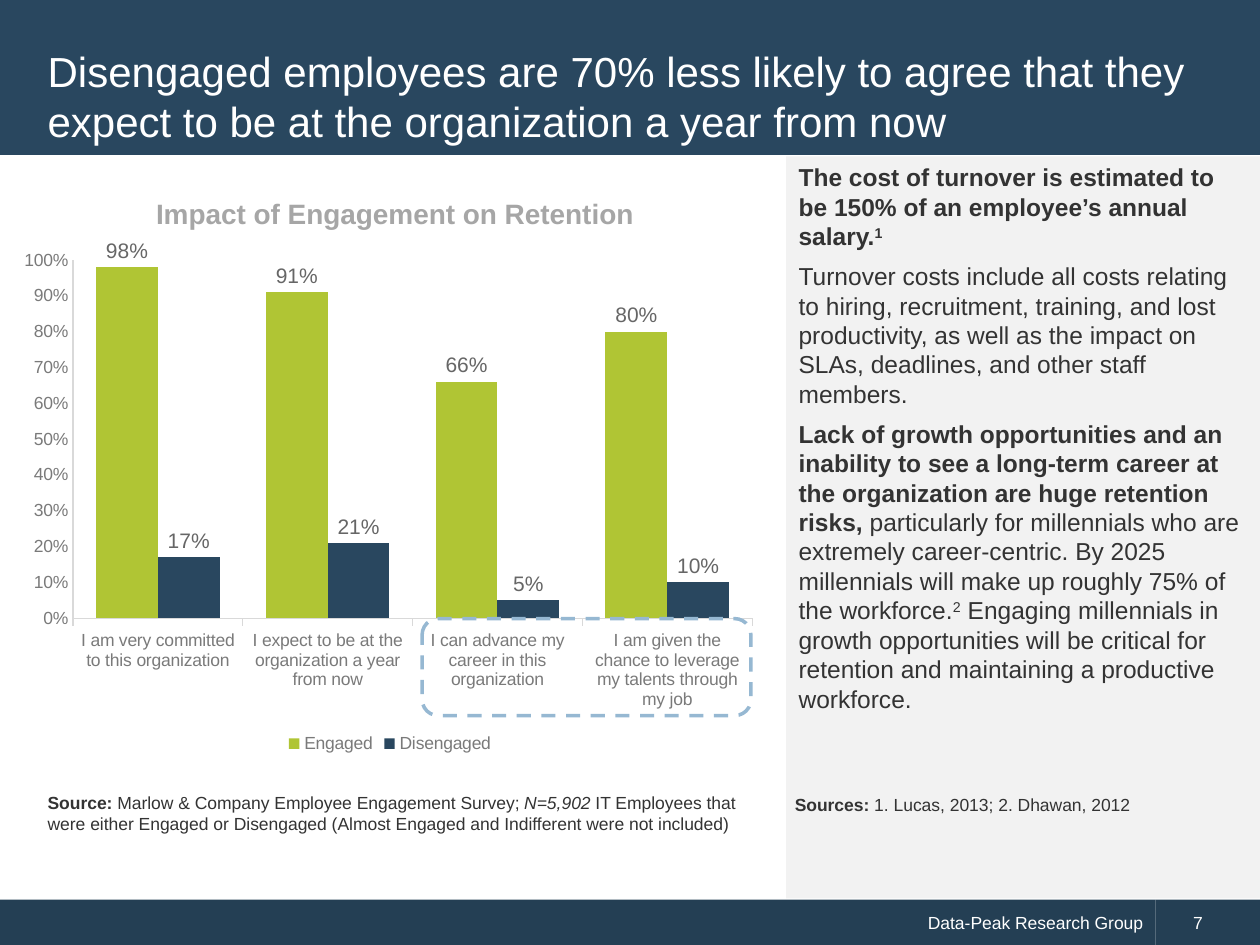
"""Builds a slide on how engagement affects retention."""
import dataclasses
import typing

import lxml.etree
import pptx
import pptx.chart.data
import pptx.chart.series
import pptx.dml.color
import pptx.enum.chart
import pptx.enum.dml
import pptx.enum.shapes
import pptx.enum.text
import pptx.oxml.ns
import pptx.shapes.base
import pptx.slide
import pptx.text.text
import pptx.util

Inches = pptx.util.Inches
Shape = pptx.enum.shapes.MSO_SHAPE
Align = pptx.enum.text.PP_ALIGN
Anchor = pptx.enum.text.MSO_ANCHOR


@dataclasses.dataclass(frozen=True)
class Theme:
    font: str = "Arial"
    navy: str = "29475F"
    footer: str = "243F54"
    panel: str = "F2F2F2"
    white: str = "FFFFFF"
    ink: str = "333333"
    heading: str = "A6A6A6"
    axis_text: str = "7A7A7A"
    axis_line: str = "D9D9D9"
    label: str = "666666"
    green: str = "B0C534"
    highlight: str = "96B8D2"
    title_size: int = 24
    heading_size: int = 16
    body_size: int = 14
    label_size: int = 12
    small_size: int = 10


THEME = Theme()


class Area(typing.NamedTuple):
    left: float
    top: float
    width: float
    height: float


class Span(typing.NamedTuple):
    text: str
    bold: bool = False
    italic: bool = False
    superscript: bool = False


@dataclasses.dataclass(frozen=True)
class Block:
    area: Area
    paragraphs: list[list[Span]]
    size: int
    color: str = THEME.ink
    fill: str | None = None
    anchor: Anchor = Anchor.TOP
    align: Align = Align.LEFT
    space_after: int = 0
    indent: float = 0


@dataclasses.dataclass(frozen=True)
class Measure:
    name: str
    values: tuple[float, ...]
    color: str


BLOCKS = [
    Block(Area(0, 7.14, 9.17, 0.37), [[Span("Data-Peak Research Group")]], THEME.small_size,
          THEME.white, THEME.footer, Anchor.MIDDLE, Align.RIGHT),
    Block(Area(9.17, 7.14, 0.83, 0.37), [[Span("7")]], THEME.small_size,
          THEME.white, THEME.footer, Anchor.MIDDLE, indent=0.2),
    Block(Area(0, 0, 10, 1.23), [], THEME.title_size, fill=THEME.navy),
    Block(Area(0.28, 0.28, 9.43, 0.96),
          [[Span("Disengaged employees are 70% less likely to agree that they "
                 "expect to be at the organization a year from now")]],
          THEME.title_size, THEME.white, anchor=Anchor.MIDDLE),
    Block(Area(6.24, 1.24, 3.76, 5.89), [
        [Span("The cost of turnover is estimated to be 150% of an employee’s annual salary.", bold=True),
         Span("1", bold=True, superscript=True)],
        [Span("Turnover costs include all costs relating to hiring, recruitment, training, and lost "
              "productivity, as well as the impact on SLAs, deadlines, and other staff members.")],
        [Span("Lack of growth opportunities and an inability to see a long-term career at the "
              "organization are huge retention risks, ", bold=True),
         Span("particularly for millennials who are extremely career-centric. By 2025 millennials "
              "will make up roughly 75% of the workforce."),
         Span("2", superscript=True),
         Span(" Engaging millennials in growth opportunities will be critical for retention and "
              "maintaining a productive workforce.")],
    ], THEME.body_size, fill=THEME.panel, space_after=6),
    Block(Area(6.21, 6.25, 3.76, 0.27),
          [[Span("Sources:", bold=True), Span(" 1. Lucas, 2013; 2. Dhawan, 2012")]], THEME.small_size),
    Block(Area(0.28, 6.24, 5.93, 0.44), [
        [Span("Source:", bold=True), Span(" Marlow & Company Employee Engagement Survey; "),
         Span("N=5,902", italic=True),
         Span(" IT Employees that were either Engaged or Disengaged "
              "(Almost Engaged and Indifferent were not included)")],
    ], THEME.small_size),
    Block(Area(1.14, 1.51, 5.13, 0.37), [[Span("Impact of Engagement on Retention", bold=True)]],
          THEME.heading_size, THEME.heading),
]

CHART_AREA = Area(0.1, 1.9, 5.99, 4.12)
PLOT_LAYOUT = {"x": 0.08, "y": 0.04, "w": 0.9, "h": 0.69}
HIGHLIGHT_AREA = Area(3.35, 4.91, 2.61, 0.77)
CATEGORIES = [
    "I am very committed to this organization",
    "I expect to be at the organization a year from now",
    "I can advance my career in this organization",
    "I am given the chance to leverage my talents through my job",
]
MEASURES = [
    Measure("Engaged", (0.98, 0.91, 0.66, 0.8), THEME.green),
    Measure("Disengaged", (0.17, 0.21, 0.05, 0.1), THEME.navy),
]


def rgb(color: str) -> pptx.dml.color.RGBColor:
    return pptx.dml.color.RGBColor.from_string(color)


def style_font(font: pptx.text.text.Font, size: int, color: str) -> None:
    font.name = THEME.font
    font.size = pptx.util.Pt(size)
    font.color.rgb = rgb(color)


def add_box(page: pptx.slide.Slide, area: Area, fill: str | None, preset: Shape) -> pptx.shapes.base.BaseShape:
    box = page.shapes.add_shape(preset, *map(Inches, area))
    box.shadow.inherit = False
    box.line.fill.background()
    if fill:
        box.fill.solid()
        box.fill.fore_color.rgb = rgb(fill)
    else:
        box.fill.background()
    return box


def add_block(page: pptx.slide.Slide, block: Block) -> None:
    if block.fill:
        box = add_box(page, block.area, block.fill, Shape.RECTANGLE)
    else:
        box = page.shapes.add_textbox(*map(Inches, block.area))
    frame = box.text_frame
    frame.word_wrap = True
    frame.vertical_anchor = block.anchor
    frame.margin_left = Inches(0.1 + block.indent)
    for index, spans in enumerate(block.paragraphs):
        para = frame.add_paragraph() if index else frame.paragraphs[0]
        para.alignment = block.align
        para.space_after = pptx.util.Pt(block.space_after)
        for span in spans:
            run = para.add_run()
            run.text = span.text
            style_font(run.font, block.size, block.color)
            run.font.bold = span.bold
            run.font.italic = span.italic
            if span.superscript:
                run._r.get_or_add_rPr().set("baseline", "30000")


def style_series(series: pptx.chart.series.BarSeries, color: str) -> None:
    series.format.fill.solid()
    series.format.fill.fore_color.rgb = rgb(color)
    labels = series.data_labels
    labels.show_value = True
    labels.number_format = "0%"
    labels.number_format_is_linked = False
    labels.position = pptx.enum.chart.XL_LABEL_POSITION.OUTSIDE_END
    style_font(labels.font, THEME.label_size, THEME.label)


def add_retention_chart(page: pptx.slide.Slide) -> None:
    data = pptx.chart.data.CategoryChartData(number_format="0%")
    data.categories = CATEGORIES
    for measure in MEASURES:
        data.add_series(measure.name, measure.values)
    kind = pptx.enum.chart.XL_CHART_TYPE.COLUMN_CLUSTERED
    chart = page.shapes.add_chart(kind, *map(Inches, CHART_AREA), data).chart
    style_font(chart.font, THEME.label_size, THEME.ink)
    chart.has_title = False
    chart.has_legend = True
    chart.legend.position = pptx.enum.chart.XL_LEGEND_POSITION.BOTTOM
    chart.legend.include_in_layout = False
    style_font(chart.legend.font, THEME.small_size, THEME.axis_text)
    plot = chart.plots[0]
    plot.gap_width, plot.overlap, plot.vary_by_categories = 75, 0, False
    for series, measure in zip(plot.series, MEASURES):
        style_series(series, measure.color)
    marks = pptx.enum.chart.XL_TICK_MARK
    for axis, mark in ((chart.category_axis, marks.OUTSIDE), (chart.value_axis, marks.NONE)):
        axis.has_major_gridlines = False
        axis.major_tick_mark = mark
        axis.minor_tick_mark = marks.NONE
        axis.format.line.color.rgb = rgb(THEME.axis_line)
        axis.format.line.width = pptx.util.Pt(0.75)
        style_font(axis.tick_labels.font, THEME.small_size, THEME.axis_text)
    scale = chart.value_axis
    scale.minimum_scale, scale.maximum_scale, scale.major_unit = 0, 1, 0.1
    scale.tick_labels.number_format = "0%"
    scale.tick_labels.number_format_is_linked = False
    place_plot(chart._chartSpace.chart.plotArea)


def place_plot(plot_area: lxml.etree.ElementBase) -> None:
    qn = pptx.oxml.ns.qn
    for layout in plot_area.findall(qn("c:layout")):
        plot_area.remove(layout)
    layout = lxml.etree.Element(qn("c:layout"))
    plot_area.insert(0, layout)
    manual = lxml.etree.SubElement(layout, qn("c:manualLayout"))
    settings = {"layoutTarget": "inner", "xMode": "edge", "yMode": "edge", **PLOT_LAYOUT}
    for name, value in settings.items():
        lxml.etree.SubElement(manual, qn(f"c:{name}")).set("val", str(value))


def add_highlight(page: pptx.slide.Slide) -> None:
    box = add_box(page, HIGHLIGHT_AREA, None, Shape.ROUNDED_RECTANGLE)
    box.line.color.rgb = rgb(THEME.highlight)
    box.line.width = pptx.util.Pt(2)
    box.line.dash_style = pptx.enum.dml.MSO_LINE.DASH


def main() -> None:
    deck = pptx.Presentation()
    deck.slide_width, deck.slide_height = Inches(10), Inches(7.5)
    page = deck.slides.add_slide(deck.slide_layouts[6])
    for block in BLOCKS:
        add_block(page, block)
    add_retention_chart(page)
    add_highlight(page)
    deck.save("out.pptx")


if __name__ == "__main__":
    main()
